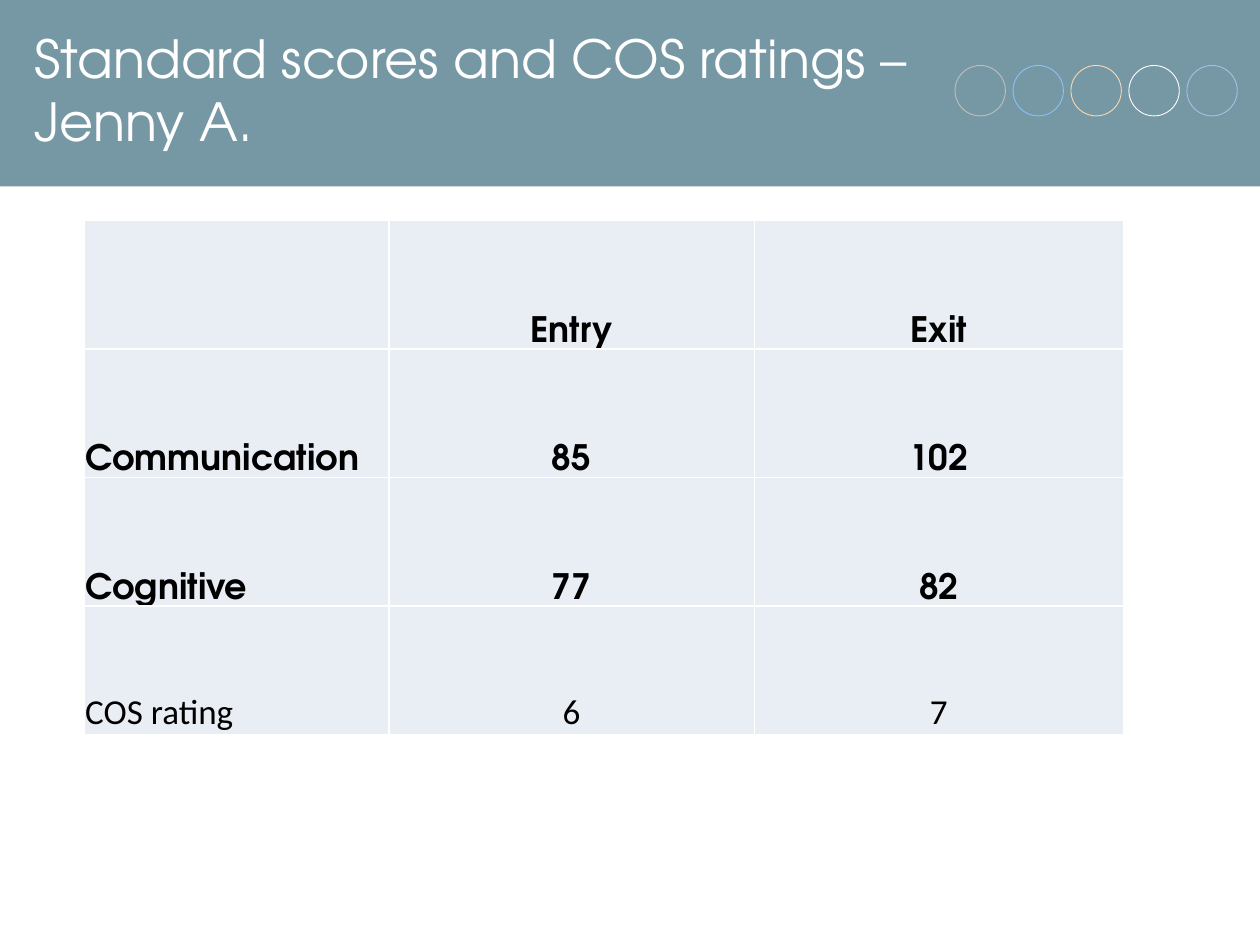
from dataclasses import dataclass

import pptx
import pptx.dml.color
import pptx.enum.shapes
import pptx.enum.text
import pptx.oxml
import pptx.oxml.ns
import pptx.util
from pptx.enum.text import MSO_ANCHOR, PP_ALIGN

SLIDE_WIDTH, SLIDE_HEIGHT = 10, 7.5
HEADING_FONT, PLAIN_FONT = "TeX Gyre Adventor", "Calibri"
COLOURS = {
    "band": "7698A4",
    "cell": "E9EDF4",
    "white": "FFFFFF",
    "black": "000000",
    "grey": "BFBFBF",
    "sky": "8DC0FD",
    "peach": "FFD7AF",
    "periwinkle": "ADBEE6",
}
RING_COLOURS = ["grey", "sky", "peach", "white", "periwinkle"]
RING_LEFT, RING_TOP, RING_SIZE, RING_PITCH = 7.58, 0.52, 0.4, 0.46
COLUMN_WIDTHS = [2.42, 2.9, 2.93]
ROW_HEIGHT = 1.02


@dataclass(frozen=True)
class Box:
    left: float
    top: float
    width: float
    height: float

    def lengths(self) -> list:
        return [pptx.util.Inches(value) for value in (self.left, self.top, self.width, self.height)]


@dataclass(frozen=True)
class ScoreRow:
    label: str
    entry: str
    exit: str
    font: str = HEADING_FONT
    bold: bool = True


SCORE_ROWS = [
    ScoreRow("", "Entry", "Exit"),
    ScoreRow("Communication", "85", "102"),
    ScoreRow("Cognitive", "77", "82"),
    ScoreRow("COS rating", "6", "7", font=PLAIN_FONT, bold=False),
]


def colour(name: str) -> pptx.dml.color.RGBColor:
    return pptx.dml.color.RGBColor.from_string(COLOURS[name])


def write_text(text_frame, text: str, *, size: float, font: str, fill: str,
               bold: bool = False, align=PP_ALIGN.LEFT) -> None:
    paragraph = text_frame.paragraphs[0]
    paragraph.alignment = align
    run = paragraph.add_run()
    run.text = text
    run.font.size = pptx.util.Pt(size)
    run.font.name = font
    run.font.bold = bold
    run.font.color.rgb = colour(fill)


def add_shape(slide, kind, box: Box, *, fill: str = "", line: str = "") -> None:
    shape = slide.shapes.add_shape(kind, *box.lengths())
    shape.shadow.inherit = False
    if fill:
        shape.fill.solid()
        shape.fill.fore_color.rgb = colour(fill)
    else:
        shape.fill.background()
    if line:
        shape.line.color.rgb = colour(line)
        shape.line.width = pptx.util.Pt(0.5)
    else:
        shape.line.fill.background()


def add_header(slide) -> None:
    kinds = pptx.enum.shapes.MSO_SHAPE
    add_shape(slide, kinds.RECTANGLE, Box(0, -0.02, SLIDE_WIDTH, SLIDE_HEIGHT / 5), fill="band")
    for index, name in enumerate(RING_COLOURS):
        box = Box(RING_LEFT + index * RING_PITCH, RING_TOP, RING_SIZE, RING_SIZE)
        add_shape(slide, kinds.OVAL, box, line=name)


def set_title(slide, text: str, box: Box) -> None:
    """Fill the title placeholder and bring it in front of the header band."""
    title = slide.shapes.title
    title.left, title.top, title.width, title.height = box.lengths()
    frame = title.text_frame
    frame.word_wrap = True
    frame.auto_size = pptx.enum.text.MSO_AUTO_SIZE.NONE
    frame.vertical_anchor = MSO_ANCHOR.MIDDLE
    write_text(frame, text, size=30, font=HEADING_FONT, fill="white")
    title.element.getparent().append(title.element)


def format_cell(cell) -> None:
    """Set margins, then white borders, then the fill, in the order the schema needs."""
    cell.vertical_anchor = MSO_ANCHOR.BOTTOM
    cell.margin_left = cell.margin_right = cell.margin_top = pptx.util.Inches(0.01)
    cell.margin_bottom = 0
    properties = cell._tc.get_or_add_tcPr()
    for side in ("lnL", "lnR", "lnT", "lnB"):
        properties.append(pptx.oxml.parse_xml(
            f'<a:{side} {pptx.oxml.ns.nsdecls("a")} w="{pptx.util.Pt(1)}"><a:solidFill>'
            f'<a:srgbClr val="{COLOURS["white"]}"/></a:solidFill></a:{side}>'))
    cell.fill.solid()
    cell.fill.fore_color.rgb = colour("cell")


def add_score_table(slide, left: float, top: float) -> None:
    box = Box(left, top, sum(COLUMN_WIDTHS), ROW_HEIGHT * len(SCORE_ROWS))
    table = slide.shapes.add_table(len(SCORE_ROWS), len(COLUMN_WIDTHS), *box.lengths()).table
    table.first_row = table.horz_banding = False
    for column, width in zip(table.columns, COLUMN_WIDTHS):
        column.width = pptx.util.Inches(width)
    for row, score in zip(table.rows, SCORE_ROWS):
        row.height = pptx.util.Inches(ROW_HEIGHT)
        for index, text in enumerate((score.label, score.entry, score.exit)):
            cell = row.cells[index]
            format_cell(cell)
            if text:
                write_text(cell.text_frame, text, size=20, font=score.font, fill="black",
                           bold=score.bold, align=PP_ALIGN.CENTER if index else PP_ALIGN.LEFT)


def main() -> None:
    presentation = pptx.Presentation()
    presentation.slide_width = pptx.util.Inches(SLIDE_WIDTH)
    presentation.slide_height = pptx.util.Inches(SLIDE_HEIGHT)
    slide = presentation.slides.add_slide(presentation.slide_layouts[5])
    add_header(slide)
    set_title(slide, "Standard scores and COS ratings – Jenny A.", Box(0.17, 0.08, 7.33, 1.25))
    add_score_table(slide, SLIDE_WIDTH / 15, 1.75)
    presentation.save("out.pptx")


if __name__ == "__main__":
    main()
